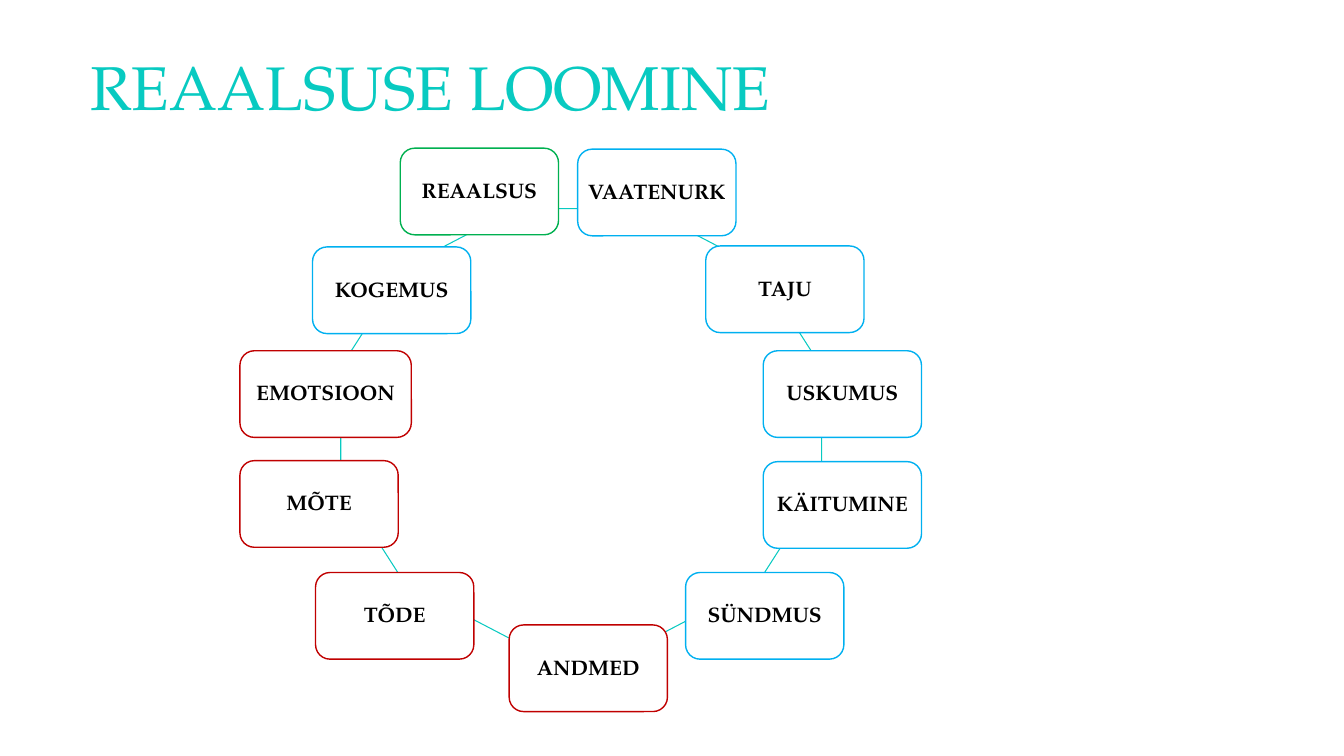
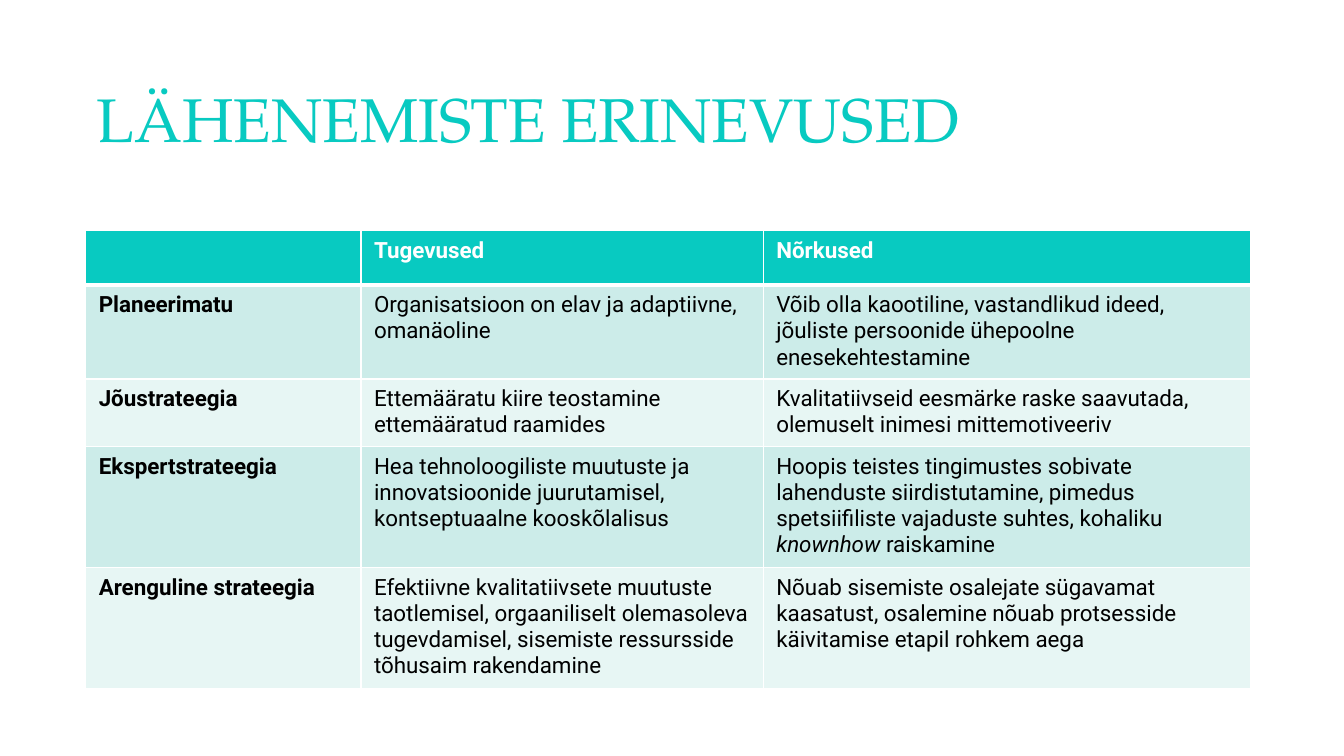
from lxml import etree
from pptx import Presentation
from pptx.dml.color import RGBColor
from pptx.enum import shapes, text
from pptx.oxml import ns
from pptx.util import Inches, Pt

TEAL, WHITE, BLACK = "08CAC1", "FFFFFF", "000000"
BLUE, RED, GREEN = "00B0F0", "C00000", "00B050"
BANDS = ("CCECE9", "E7F6F4")
SERIF, SANS = "TeX Gyre Pagella", "Roboto"

# Label, line colour, offset from the ring's corner, width
NODE_W, NODE_H = 1.57, 0.86
NODES = [
    ("VAATENURK", BLUE, 2.35, -0.59, NODE_W),
    ("TAJU", BLUE, 3.62, 0.37, NODE_W),
    ("USKUMUS", BLUE, 4.19, 1.41, NODE_W),
    ("KÄITUMINE", BLUE, 4.19, 2.51, NODE_W),
    ("SÜNDMUS", BLUE, 3.42, 3.61, NODE_W),
    ("ANDMED", RED, 1.67, 4.13, NODE_W),
    ("TÕDE", RED, -0.25, 3.61, NODE_W),
    ("MÕTE", RED, -1, 2.5, NODE_W),
    ("EMOTSIOON", RED, -1, 1.41, 1.7),
    ("KOGEMUS", BLUE, -0.28, 0.38, NODE_W),
    ("REAALSUS", GREEN, 0.59, -0.6, NODE_W),
]

COLS = (2.73, 3.99, 4.83)
ROWS = (0.54, 0.93, 0.67, 1.2, 1.2)
ITALIC = "knownhow"
STRATEGIES = [
    ("", "Tugevused", "Nõrkused"),
    ("Planeerimatu",
     "Organisatsioon on elav ja adaptiivne, omanäoline",
     "Võib olla kaootiline, vastandlikud ideed, jõuliste persoonide "
     "ühepoolne enesekehtestamine"),
    ("Jõustrateegia",
     "Ettemääratu kiire teostamine ettemääratud raamides",
     "Kvalitatiivseid eesmärke raske saavutada, olemuselt inimesi "
     "mittemotiveeriv"),
    ("Ekspertstrateegia",
     "Hea tehnoloogiliste muutuste ja innovatsioonide juurutamisel, "
     "kontseptuaalne kooskõlalisus",
     "Hoopis teistes tingimustes sobivate lahenduste siirdistutamine, "
     "pimedus spetsiifiliste vajaduste suhtes, kohaliku knownhow raiskamine"),
    ("Arenguline strateegia",
     "Efektiivne kvalitatiivsete muutuste taotlemisel, orgaaniliselt "
     "olemasoleva tugevdamisel, sisemiste ressursside tõhusaim rakendamine",
     "Nõuab sisemiste osalejate sügavamat kaasatust, osalemine nõuab "
     "protsesside käivitamise etapil rohkem aega"),
]


def rgb(color):
    return RGBColor.from_string(color)


def style(r, font, size, color, bold=False):
    r.font.name, r.font.size, r.font.bold = font, Pt(size), bold
    r.font.color.rgb = rgb(color)


def add_titled_slide(prs, title, x, y, w, h):
    s = prs.slides.add_slide(prs.slide_layouts[5])
    sp = s.shapes.title
    sp.left, sp.top, sp.width, sp.height = map(Inches, (x, y, w, h))
    tf = sp.text_frame
    tf.text = title
    tf.auto_size = text.MSO_AUTO_SIZE.NONE
    tf.vertical_anchor = text.MSO_ANCHOR.BOTTOM
    p = tf.paragraphs[0]
    p.alignment, p.line_spacing = text.PP_ALIGN.LEFT, 0.9
    style(p.runs[0], SERIF, 44, TEAL)
    return s


def add_outline(s, kind, x, y, w, h, color, weight):
    sp = s.shapes.add_shape(kind, *map(Inches, (x, y, w, h)))
    sp.shadow.inherit = False
    sp.line.color.rgb, sp.line.width = rgb(color), Pt(weight)
    return sp


def add_node(s, label, color, x, y, w):
    sp = add_outline(s, shapes.MSO_SHAPE.ROUNDED_RECTANGLE,
                     x, y, w, NODE_H, color, 1)
    sp.fill.solid()
    sp.fill.fore_color.rgb = rgb(WHITE)
    tf = sp.text_frame
    tf.text = label
    tf.word_wrap = False
    tf.vertical_anchor = text.MSO_ANCHOR.MIDDLE
    p = tf.paragraphs[0]
    p.alignment, p.line_spacing = text.PP_ALIGN.CENTER, 0.9
    style(p.runs[0], SERIF, 15, BLACK, True)


def add_cycle(s, x, y, w, h):
    # Ring behind the nodes
    ring = add_outline(s, shapes.MSO_SHAPE.DODECAGON, x, y, w, h, TEAL, 0.75)
    ring.fill.background()
    for label, color, dx, dy, node_w in NODES:
        add_node(s, label, color, x + dx, y + dy, node_w)


def set_border(cell, side, weight):
    # Borders must come before the cell's fill
    ln = etree.Element(ns.qn(f"a:{side}"), w=str(Pt(weight)))
    fill = etree.SubElement(ln, ns.qn("a:solidFill"))
    etree.SubElement(fill, ns.qn("a:srgbClr"), val=WHITE)
    cell._tc.get_or_add_tcPr().append(ln)


def fill_cell(cell, content, row, col):
    header = row == 0
    cell.margin_left = cell.margin_right = Inches(0.13)
    cell.margin_top = cell.margin_bottom = Inches(0.07)
    for side in ("lnL", "lnR", "lnT", "lnB"):
        thick = (header and side == "lnB") or (row == 1 and side == "lnT")
        set_border(cell, side, 3 if thick else 1)
    cell.fill.solid()
    cell.fill.fore_color.rgb = rgb(TEAL if header else BANDS[(row - 1) % 2])
    # Text, with the loan word in italics
    p = cell.text_frame.paragraphs[0]
    before, loan, after = content.partition(ITALIC)
    for part in filter(None, (before, loan, after)):
        r = p.add_run()
        r.text = part
        style(r, SANS, 16, WHITE if header else BLACK, header or col == 0)
        r.font.italic = part == ITALIC


def add_strategy_table(s, x, y):
    size = (x, y, sum(COLS), sum(ROWS))
    table = s.shapes.add_table(len(ROWS), len(COLS), *map(Inches, size)).table
    for column, w in zip(table.columns, COLS):
        column.width = Inches(w)
    for row, h in zip(table.rows, ROWS):
        row.height = Inches(h)
    for i, contents in enumerate(STRATEGIES):
        for j, content in enumerate(contents):
            fill_cell(table.cell(i, j), content, i, j)


def main():
    prs = Presentation()
    prs.slide_width, prs.slide_height = Inches(13.33), Inches(7.5)

    s = add_titled_slide(prs, "REAALSUSE LOOMINE", 0.8, 0.18, 11.03, 1.1)
    add_cycle(s, 3.38, 2.07, 4.77, 4.3)

    s = add_titled_slide(prs, "LÄHENEMISTE ERINEVUSED", 0.86, 0.35, 9.2, 1.25)
    add_strategy_table(s, 0.85, 2.29)

    prs.save("out.pptx")


if __name__ == "__main__":
    main()
